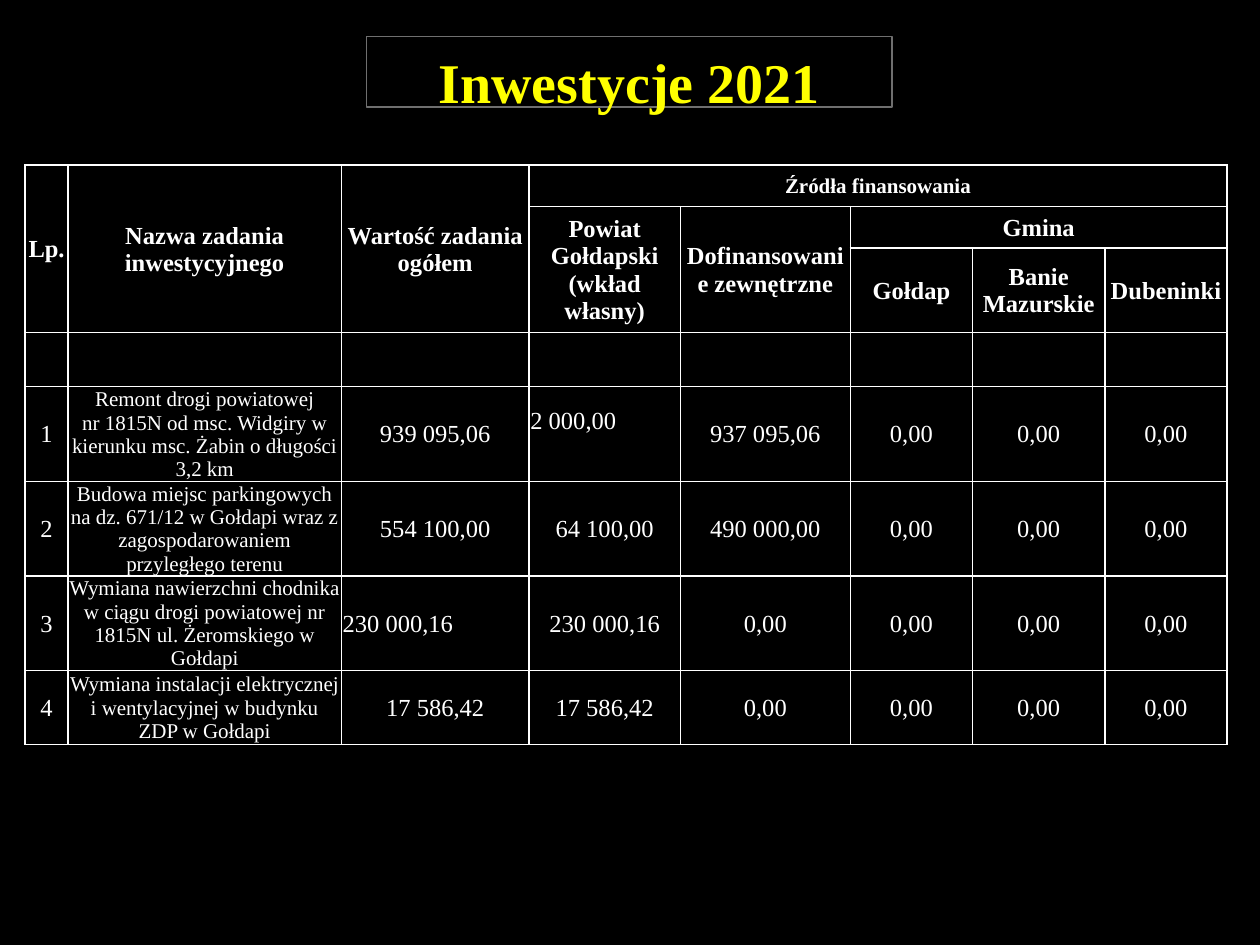
from lxml import etree
from pptx import Presentation
from pptx.dml.color import RGBColor
from pptx.enum.shapes import MSO_SHAPE
from pptx.enum.text import MSO_ANCHOR, PP_ALIGN
from pptx.oxml.ns import qn
from pptx.util import Inches, Pt

RECT = MSO_SHAPE.RECTANGLE
TOP, MIDDLE = MSO_ANCHOR.TOP, MSO_ANCHOR.MIDDLE
LEFT, CENTER = PP_ALIGN.LEFT, PP_ALIGN.CENTER
FONT = "Times New Roman"
COLORS = {"back": "000000", "text": "FFFFFF", "title": "FFFF00", "frame": "6F6F6F"}


def style(para, size, color, bold, align=CENTER):
    para.alignment = align
    for run in para.runs:
        run.font.name = FONT
        run.font.size = Pt(size)
        run.font.bold = bold
        run.font.color.rgb = RGBColor.from_string(COLORS[color])


def border(cell):
    props = cell._tc.get_or_add_tcPr()
    for side in ("lnL", "lnR", "lnT", "lnB"):
        line = etree.SubElement(props, qn("a:" + side), w=str(Pt(1)))
        fill = etree.SubElement(line, qn("a:solidFill"))
        etree.SubElement(fill, qn("a:srgbClr"), val=COLORS["text"])


prs = Presentation()
prs.slide_width, prs.slide_height = Inches(10), Inches(7.5)
slide = prs.slides.add_slide(prs.slide_layouts[6])
slide.background.fill.solid()
slide.background.fill.fore_color.rgb = RGBColor.from_string(COLORS["back"])

# Investment table: header cells as (row, column, rows, columns, text, size)
heads = [
    (0, 0, 3, 1, "Lp.", 14),
    (0, 1, 3, 1, "Nazwa zadania inwestycyjnego", 14),
    (0, 2, 3, 1, "Wartość zadania ogółem", 14),
    (0, 3, 1, 5, "Źródła finansowania", 12),
    (1, 3, 2, 1, "Powiat Gołdapski (wkład własny)", 14),
    (1, 4, 2, 1, "Dofinansowanie zewnętrzne", 14),
    (1, 5, 1, 3, "Gmina", 14),
    (2, 5, 1, 1, "Gołdap", 14),
    (2, 6, 1, 1, "Banie Mazurskie", 14),
    (2, 7, 1, 1, "Dubeninki", 14),
]
# Task name, total value, county share, outside funding
tasks = [
    ("Remont drogi powiatowej\nnr 1815N od msc. Widgiry w kierunku msc. Żabin o długości 3,2 km",
     "939 095,06", "2 000,00", "937 095,06"),
    ("Budowa miejsc parkingowych na dz. 671/12 w Gołdapi wraz z zagospodarowaniem "
     "przyległego terenu", "554 100,00", "64 100,00", "490 000,00"),
    ("Wymiana nawierzchni chodnika w ciągu drogi powiatowej nr 1815N ul. Żeromskiego w Gołdapi",
     "230 000,16", "230 000,16", "0,00"),
    ("Wymiana instalacji elektrycznej i wentylacyjnej w budynku ZDP w Gołdapi",
     "17 586,42", "17 586,42", "0,00"),
]
widths = [0.34, 2.17, 1.49, 1.2, 1.35, 0.97, 1.05, 0.97]
heights = [0.33, 0.33, 0.67, 0.43, 0.57, 0.58, 0.59, 0.59]
first = 4  # first task row, after the header and one empty row

table = slide.shapes.add_table(
    len(heights), len(widths), Inches(0.2), Inches(1.31),
    Inches(sum(widths)), Inches(sum(heights))).table
table.first_row = table.horz_banding = False
for col, width in zip(table.columns, widths):
    col.width = Inches(width)
for row, height in zip(table.rows, heights):
    row.height = Inches(height)

for cell in table.iter_cells():
    border(cell)
    cell.fill.background()
    cell.vertical_anchor = MIDDLE
    cell.margin_left = cell.margin_right = cell.margin_top = Inches(0.01)
    cell.margin_bottom = 0

# Header
for row, col, down, across, text, size in heads:
    cell = table.cell(row, col)
    if down * across > 1:
        cell.merge(table.cell(row + down - 1, col + across - 1))
    cell.text_frame.text = text
    style(cell.text_frame.paragraphs[0], size, "text", True)

# Task rows; the three communes pay nothing
for num, task in enumerate(tasks, 1):
    for col, text in enumerate([str(num), *task] + ["0,00"] * 3):
        frame = table.cell(first + num - 1, col).text_frame
        frame.text = text
        align = LEFT if (num, col) in ((1, 3), (3, 2)) else CENTER
        for para in frame.paragraphs:
            style(para, 12 if col == 1 else 14, "text", False, align)
table.cell(first, 3).margin_bottom = Inches(0.21)  # this amount sits above the middle

# Title
title = slide.shapes.add_shape(RECT, Inches(2.91), Inches(0.29), Inches(4.17), Inches(0.56))
title.shadow.inherit = False
title.fill.background()
title.line.color.rgb = RGBColor.from_string(COLORS["frame"])
title.line.width = Pt(0.75)
frame = title.text_frame
frame.word_wrap = True
frame.vertical_anchor = TOP
frame.margin_top, frame.margin_bottom = Inches(0.09), 0
frame.text = "Inwestycje 2021"
style(frame.paragraphs[0], 32, "title", True)

prs.save("out.pptx")
